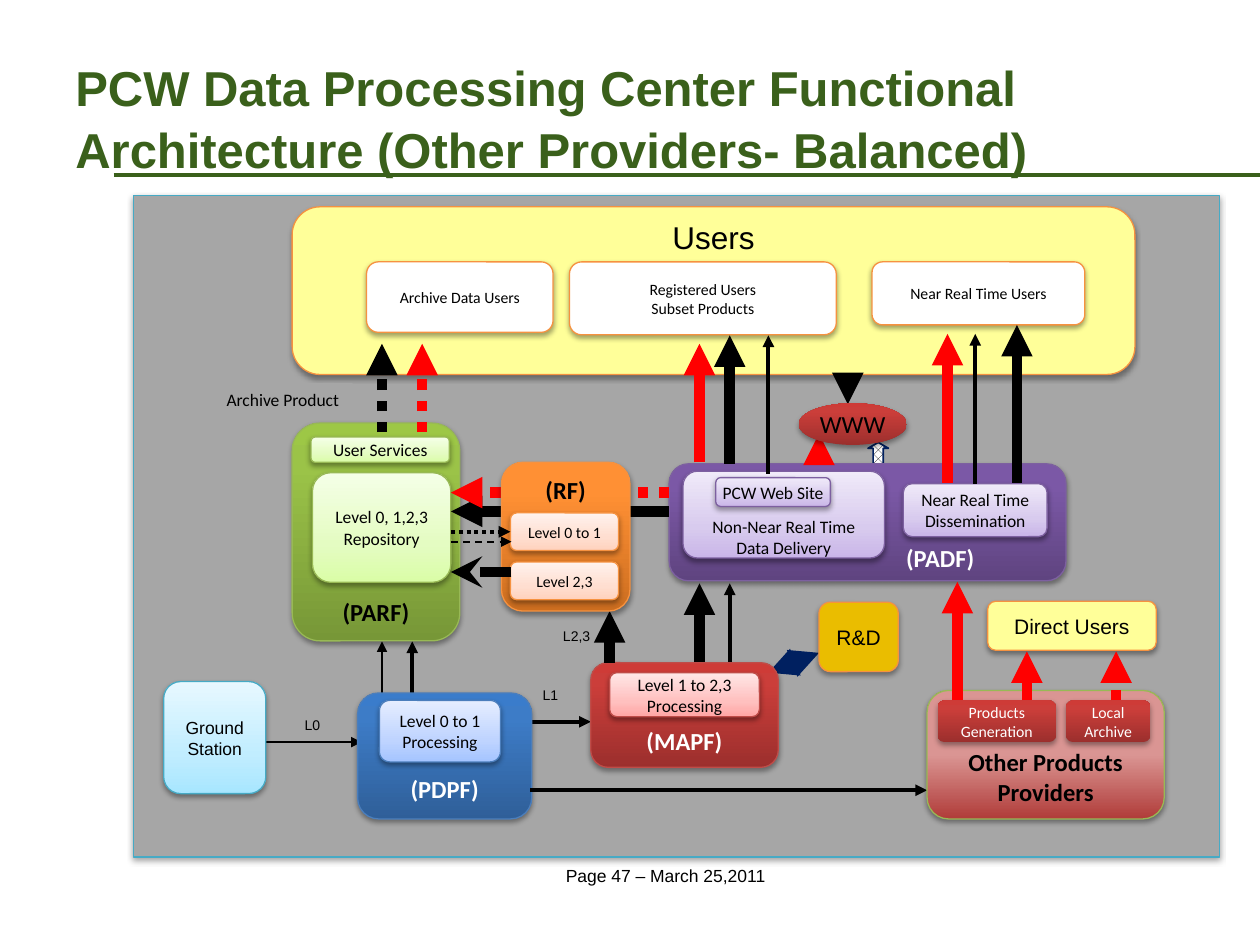
"""Build the slide with the functional architecture of the PCW data processing center."""
import copy

import pptx
import pptx.dml.color
import pptx.enum.dml
import pptx.enum.shapes
import pptx.enum.text
import pptx.oxml
import pptx.oxml.ns
import pptx.util

Cm, Pt = pptx.util.Cm, pptx.util.Pt
SHAPE = pptx.enum.shapes.MSO_SHAPE
DASH = pptx.enum.dml.MSO_LINE
ANCHOR = pptx.enum.text.MSO_ANCHOR
ALIGN = pptx.enum.text.PP_ALIGN

BLACK, WHITE, RED, GREEN = "000000", "FFFFFF", "FF0000", "3A601B"
GREY, YELLOW, ORANGE, NAVY = "A6A6A6", "FFFF99", "F69240", "002060"


def color(code):
    return pptx.dml.color.RGBColor.from_string(code)


def dark(*codes):
    return list(zip((0, 0.8, 1), codes))


def light(*codes):
    return list(zip((0, 0.35, 1), codes))


DEEP_PURPLE = dark("5F4480", "7B58A6", "7C57A8")
PALE_PURPLE = light("C9B5E8", "D8CBEE", "F0EAF9")
DEEP_BLUE = dark("2F5F99", "3D7CC7", "3A7CCB")
PALE_BLUE = light("A4C4FF", "BFD4FF", "E6EEFF")
PALE_CYAN = light("A7E6FF", "C1EDFF", "E7F8FF")
DEEP_GREEN = dark("779737", "9BC348", "9DC746")
PALE_GREEN = light("DAFDA7", "E4FCC2", "F5FFE7")
DEEP_RED = dark("9C2F2D", "CB3E3A", "CE3B37")
PALE_RED = light("FFA6A5", "FFC0BF", "FFE7E7")
DEEP_ORANGE = dark("CC6E20", "FF9034", "FF9136")
PALE_ORANGE = light("FFD2BD", "FFDED0", "FFF2ED")
PROVIDER_RED = [(0, "B03C39"), (0.5, "DA9593"), (1, "DA9593")]
PURPLE_LINE, BLUE_LINE, CYAN_LINE = "7D60A0", "4B7EBC", "46AAC5"
GREEN_LINE, RED_LINE = "98B955", "BF4C48"


class Diagram:
    """Holds the style and the current slide."""

    def __init__(self, page, font="Calibri"):
        self.page = page
        self.font = font

    def fill_text(self, box, lines, size, ink=BLACK, bold=False, font=None, align=ALIGN.CENTER,
                  anchor=ANCHOR.MIDDLE, wrap=True, spacing=None):
        frame = box.text_frame
        frame.word_wrap = wrap
        frame.vertical_anchor = anchor
        for index, line in enumerate(lines):
            para = frame.add_paragraph() if index else frame.paragraphs[0]
            para.alignment = align
            if spacing:
                para.line_spacing = spacing
            span = para.add_run()
            span.text = line
            span.font.name = font or self.font
            span.font.size = Pt(size)
            span.font.bold = bold
            span.font.color.rgb = color(ink)

    def label(self, place, text, size, **style):
        box = self.page.shapes.add_textbox(*map(Cm, place))
        self.fill_text(box, [text], size, **{"font": "Arial", "anchor": ANCHOR.TOP, **style})
        return box

    def paint(self, shape, fill):
        if isinstance(fill, str):
            shape.fill.solid()
            shape.fill.fore_color.rgb = color(fill)
            return
        shape.fill.gradient()
        shape.fill.gradient_angle = 90
        stops = shape._element.spPr.find(pptx.oxml.ns.qn("a:gradFill")).gsLst
        stops.append(copy.deepcopy(stops[-1]))
        for stop, (position, code) in zip(shape.fill.gradient_stops, fill):
            stop.position = position
            stop.color.rgb = color(code)

    def shade(self, shape):
        shape._element.spPr.append(pptx.oxml.parse_xml(
            f'<a:effectLst {pptx.oxml.ns.nsdecls("a")}><a:outerShdw blurRad="39400" dist="21600" '
            'dir="5400000" rotWithShape="0"><a:srgbClr val="000000"><a:alpha val="37000"/>'
            '</a:srgbClr></a:outerShdw></a:effectLst>'))

    def block(self, place, fill, line=None, lines=(), size=10, kind=SHAPE.ROUNDED_RECTANGLE,
              left=0.25, top=0.13, bottom=0.13, **style):
        shape = self.page.shapes.add_shape(kind, *map(Cm, place))
        self.paint(shape, fill)
        if line:
            shape.line.color.rgb = color(line)
            shape.line.width = Pt(0.75)
        else:
            shape.line.fill.background()
        self.shade(shape)
        frame = shape.text_frame
        frame.margin_left, frame.margin_top, frame.margin_bottom = map(Cm, (left, top, bottom))
        self.fill_text(shape, lines, size, **style)
        return shape

    def connector(self, start, end, width=6, ink=BLACK, dash=None, tail="triangle", head=None):
        straight = pptx.enum.shapes.MSO_CONNECTOR.STRAIGHT
        link = self.page.shapes.add_connector(straight, *map(Cm, (*start, *end)))
        link.line.color.rgb = color(ink)
        link.line.width = Pt(width)
        if dash:
            link.line.dash_style = dash
        outline = link._element.spPr.find(pptx.oxml.ns.qn("a:ln"))
        for tag, arrow in (("headEnd", head), ("tailEnd", tail)):
            if arrow:
                outline.append(pptx.oxml.parse_xml(
                    f'<a:{tag} {pptx.oxml.ns.nsdecls("a")} type="{arrow}"/>'))
        link._element.spPr.append(pptx.oxml.parse_xml(
            f'<a:effectLst {pptx.oxml.ns.nsdecls("a")}/>'))
        return link

    def rise(self, x, bottom, top, *style):
        return self.connector((x, bottom), (x, top), *style)

    def level(self, y, start, end, *style):
        return self.connector((start, y), (end, y), *style)

    def hatched_arrow(self, place):
        arrow = self.page.shapes.add_shape(SHAPE.UP_ARROW, *map(Cm, place))
        arrow.adjustments[1] = 0.29
        arrow.fill.patterned()
        arrow.fill.pattern = pptx.enum.dml.MSO_PATTERN.PERCENT_50
        arrow.fill.fore_color.rgb = color(BLACK)
        arrow.fill.back_color.rgb = color(WHITE)
        arrow.line.color.rgb = color(NAVY)
        arrow.line.width = Pt(1)
        arrow.shadow.inherit = False


def main():
    deck = pptx.Presentation()
    deck.slide_width, deck.slide_height = Cm(25.4), Cm(19.05)
    draw = Diagram(deck.slides.add_slide(deck.slide_layouts[6]))
    heading = {"size": 14, "bold": True, "anchor": ANCHOR.BOTTOM}
    dots = DASH.ROUND_DOT

    draw.label((2.11, 17.32, 22.61, 0.69), "Page 47 – March 25,2011", 10)
    draw.level(3.53, 2.29, 25.4, 2.25, GREEN, None, None)
    draw.block((2.69, 3.94, 21.89, 13.34), GREY, CYAN_LINE, kind=SHAPE.RECTANGLE)
    draw.label((1.27, 0.76, 22.86, 3.18),
               "PCW Data Processing Center Functional Architecture (Other Providers- Balanced)", 28,
               ink=GREEN, bold=True, align=ALIGN.LEFT, anchor=ANCHOR.MIDDLE, spacing=1.05)

    draw.block((5.89, 4.17, 16.99, 3.38), YELLOW, ORANGE, ["Users"], 18, font="Arial",
               anchor=ANCHOR.TOP, top=0.06)
    for left, width, height, lines in (
            (17.58, 4.29, 1.27, ["Near Real Time Users"]),
            (7.39, 3.76, 1.42, ["Archive Data Users"]),
            (11.48, 5.38, 1.47, ["Registered Users", "Subset Products"])):
        draw.block((left, 5.28, width, height), WHITE, ORANGE, lines, 9)

    draw.rise(8.31, 14.05, 12.93, 2.25)
    draw.rise(7.7, 14.05, 12.93, 1)
    draw.level(14.96, 5.31, 7.29, 1)
    draw.connector((16.51, 13.16), (15.49, 13.56), 5.5, NAVY, head="triangle")
    draw.rise(17.09, 7.52, 8.15)
    draw.rise(14.1, 13.36, 11.76)
    draw.rise(14.71, 13.36, 11.76, 2.25)
    draw.hatched_arrow((17.5, 8.92, 0.41, 1.5))

    draw.block((13.49, 9.35, 8, 2.36), DEEP_PURPLE, PURPLE_LINE, ["(PADF)"], ink=WHITE,
               left=3.18, bottom=0.06, **heading)
    dissemination = draw.block((18.21, 9.75, 2.9, 1.07), PALE_PURPLE, PURPLE_LINE,
                               ["Near Real Time", "Dissemination"])
    draw.block((13.77, 9.5, 4.06, 1.75), PALE_PURPLE, PURPLE_LINE,
               ["Non-Near Real Time Data Delivery"], anchor=ANCHOR.TOP, top=0.82)
    draw.block((14.43, 9.63, 2.31, 0.58), PALE_PURPLE, PURPLE_LINE, ["PCW Web Site"], wrap=False)

    draw.level(14.55, 10.11, 11.91, 2.25)
    draw.block((16.51, 12.14, 1.6, 1.4), "EABD00", ORANGE, ["R&D"], 12, font="Arial")
    draw.block((7.21, 13.97, 3.51, 2.54), DEEP_BLUE, BLUE_LINE, ["(PDPF)"], ink=WHITE,
               bottom=0.18, **heading)
    draw.block((7.65, 14.12, 2.44, 1.24), PALE_BLUE, BLUE_LINE, ["Level 0 to 1", "Processing"])
    draw.block((3.3, 13.74, 2.06, 2.26), PALE_CYAN, CYAN_LINE, ["Ground Station"], font="Arial")
    draw.block((5.89, 8.53, 3.38, 4.39), DEEP_GREEN, GREEN_LINE, ["(PARF)"], **heading)
    draw.block((6.27, 8.81, 2.79, 0.51), PALE_GREEN, GREEN_LINE, ["User Services"])
    draw.block((6.3, 9.53, 2.79, 2.21), PALE_GREEN, GREEN_LINE, ["Level 0, 1,2,3", "Repository"])
    draw.block((11.91, 13.36, 3.78, 2.11), DEEP_RED, RED_LINE, ["(MAPF)"], ink=WHITE, **heading)
    draw.block((12.29, 13.56, 3.02, 0.89), PALE_RED, RED_LINE, ["Level 1 to 2,3 Processing"])

    draw.paint(draw.label((4.29, 7.72, 2.82, 0.69), "Archive Product", 10, font="Calibri"), GREY)
    for left, top, width, text in ((5.89, 14.33, 0.84, "L0"), (10.69, 13.72, 0.84, "L1"),
                                   (11.1, 12.52, 1.07, "L2,3")):
        draw.label((left, top, width, 0.58), text, 8, align=ALIGN.LEFT, wrap=False)
    draw.level(10.31, 13.49, 9.09)
    draw.level(9.93, 13.49, 9.09, 6, RED, dots)
    draw.rise(12.29, 13.36, 12.32)
    draw.level(15.93, 10.69, 18.69, 2.25)
    draw.block((10.11, 9.32, 2.59, 3), DEEP_ORANGE, ORANGE, ["(RF)"],
               **{**heading, "anchor": ANCHOR.TOP})
    level_one, _ = [draw.block((10.29, top, 2.18, 0.76), PALE_ORANGE, ORANGE, [text], 9)
                    for top, text in ((10.34, "Level 0 to 1"), (11.33, "Level 2,3"))]

    for x, ink in ((7.7, BLACK), (8.51, RED)):
        draw.rise(x, 8.71, 6.93, 6, ink, dots)
    draw.rise(14.1, 9.32, 6.93, 6, RED)
    draw.rise(14.71, 9.35, 6.76)
    draw.rise(15.49, 9.55, 6.76, 2.25)
    draw.rise(19.1, 9.73, 6.73, 6, RED)
    draw.rise(19.66, 9.75, 6.73, 2.25).begin_connect(dissemination, 0)
    draw.rise(20.5, 9.73, 6.55)
    draw.rise(16.51, 9.32, 8.74, 6, RED)
    draw.block((16.1, 8.13, 2.18, 0.84), DEEP_RED, None, ["WWW"], 14, kind=SHAPE.OVAL, wrap=False)

    draw.block((18.69, 13.92, 4.78, 2.59), PROVIDER_RED, GREEN_LINE,
               ["Other Products Providers"], **heading)
    for left, width, lines in ((21.49, 1.7, ["Local", "Archive"]),
                               (18.9, 2.39, ["Products", "Generation"])):
        draw.block((left, 14.12, width, 0.84), DEEP_RED, None, lines, 9, ink=WHITE, wrap=False)
    draw.block((19.91, 12.12, 3.4, 0.99), YELLOW, ORANGE, ["Direct Users"], 12, font="Arial")
    for x, top, dash in ((20.7, 13.13, None), (22.5, 13.13, dots), (19.3, 11.73, None)):
        draw.rise(x, 14.12, top, 6, RED, dash)
    draw.level(10.72, 9.09, 10.31, 2.25, BLACK, dots).end_connect(level_one, 1)
    draw.level(10.92, 9.09, 10.31, 1, BLACK, DASH.DASH)
    draw.level(11.53, 10.31, 9.09, 6, BLACK, None, "stealth")

    deck.save("out.pptx")


if __name__ == "__main__":
    main()
